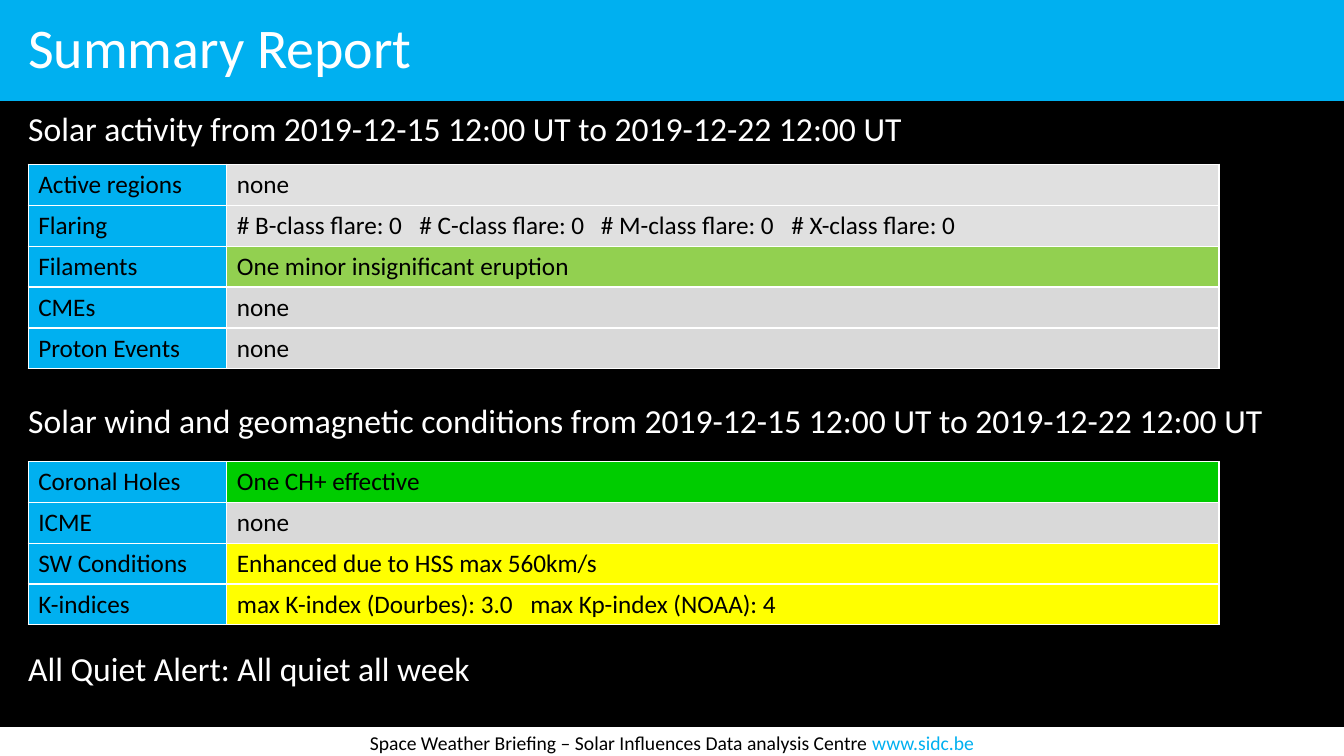
from lxml import etree
from pptx import Presentation
from pptx.dml.color import RGBColor
from pptx.enum.shapes import MSO_SHAPE
from pptx.enum.text import MSO_ANCHOR, PP_ALIGN
from pptx.oxml import parse_xml
from pptx.oxml.ns import nsdecls, qn
from pptx.util import Inches, Pt

BLACK, WHITE, BLUE = "000000", "FFFFFF", "00B0F0"
PALE, GREY = "E0E0E0", "D9D9D9"
LIME, GREEN, YELLOW = "92D050", "00CC00", "FFFF00"

WIDTH, HEIGHT = 13.33, 7.5
MARGIN = 0.28
LABEL_WIDTH, VALUE_WIDTH = 1.97, 9.84

TITLE = "Summary Report"
FOOTER = [("Space Weather Briefing – Solar Influences Data analysis Centre ", BLACK),
          ("www.sidc.be", BLUE)]

# text, top, height, line spacing
HEADINGS = [
    ("Solar activity from 2019-12-15 12:00 UT to 2019-12-22 12:00 UT", 1.04, 0.57, 0.9),
    ("Solar wind and geomagnetic conditions from 2019-12-15 12:00 UT to 2019-12-22 12:00 UT",
     3.96, 0.61, 0.8),
    ("All Quiet Alert: All quiet all week", 6.39, 0.72, 0.9),
]

# top, height, rows of (label, values, fill, tab stops)
REPORTS = [
    (1.63, 2.03, [
        ("Active regions", ["none"], PALE, []),
        ("Flaring", ["# B-class flare: 0", "# C-class flare: 0",
                     "# M-class flare: 0", "# X-class flare: 0"], PALE, [1.81, 3.61, 5.5]),
        ("Filaments", ["One minor insignificant eruption"], LIME, []),
        ("CMEs", ["none"], GREY, []),
        ("Proton Events", ["none"], GREY, []),
    ]),
    (4.58, 1.62, [
        ("Coronal Holes", ["One CH+ effective"], GREEN, []),
        ("ICME", ["none"], GREY, []),
        ("SW Conditions", ["Enhanced due to HSS max 560km/s"], YELLOW, []),
        ("K-indices", ["max K-index (Dourbes): 3.0", "max Kp-index (NOAA): 4"], YELLOW, [2.91]),
    ]),
]


def rgb(color):
    return RGBColor.from_string(color)


def set_font(font, size, color):
    font.name = "Calibri"
    font.size = Pt(size)
    font.color.rgb = rgb(color)


def set_insets(frame, left, top, right, bottom):
    frame.word_wrap = True
    frame.margin_left, frame.margin_top = Inches(left), Inches(top)
    frame.margin_right, frame.margin_bottom = Inches(right), Inches(bottom)


def add_bar(slide, top, height, color):
    bar = slide.shapes.add_shape(MSO_SHAPE.RECTANGLE, 0, Inches(top),
                                 Inches(WIDTH), Inches(height))
    bar.shadow.inherit = False
    bar.fill.solid()
    bar.fill.fore_color.rgb = rgb(color)
    bar.line.color.rgb = rgb(color)
    bar.line.width = Pt(1)
    return bar.text_frame


def add_title(slide):
    frame = add_bar(slide, 0, 1, BLUE)
    set_insets(frame, MARGIN, 0.05, 0.2, 0.05)
    frame.vertical_anchor = MSO_ANCHOR.MIDDLE
    title = frame.paragraphs[0]
    title.text = TITLE
    title.alignment = PP_ALIGN.LEFT
    title.line_spacing = 0.9
    set_font(title.font, 40, WHITE)


def add_footer(slide):
    frame = add_bar(slide, 7.22, 0.28, WHITE)
    set_insets(frame, 0.1, 0.02, 0.1, 0.02)
    frame.vertical_anchor = MSO_ANCHOR.BOTTOM
    footer = frame.paragraphs[0]
    footer.alignment = PP_ALIGN.CENTER
    for text, color in FOOTER:
        run = footer.add_run()
        run.text = text
        set_font(run.font, 14, color)


def add_heading(slide, text, top, height, spacing):
    frame = slide.shapes.add_textbox(0, Inches(top), Inches(WIDTH), Inches(height)).text_frame
    set_insets(frame, MARGIN, 0.08, MARGIN, 0.2)
    heading = frame.paragraphs[0]
    heading.text = text
    heading.line_spacing = spacing
    set_font(heading.font, 24, WHITE)


def add_tab_stops(paragraph, stops):
    tab_list = etree.SubElement(paragraph._p.get_or_add_pPr(), qn("a:tabLst"))
    for stop in stops:
        etree.SubElement(tab_list, qn("a:tab"), pos=str(Inches(stop)), algn="l")


def fill_cell(cell, values, color, stops):
    properties = cell._tc.get_or_add_tcPr()
    for side in ("lnL", "lnR", "lnT", "lnB"):
        properties.append(parse_xml(
            f'<a:{side} {nsdecls("a")} w="{Pt(1)}"><a:solidFill>'
            f'<a:srgbClr val="{WHITE}"/></a:solidFill></a:{side}>'))
    cell.fill.solid()
    cell.fill.fore_color.rgb = rgb(color)
    paragraph = cell.text_frame.paragraphs[0]
    paragraph.text = "\t".join(values)
    if stops:
        add_tab_stops(paragraph, stops)
    set_font(paragraph.font, 18, BLACK)


def add_report(slide, top, height, rows):
    table = slide.shapes.add_table(len(rows), 2, Inches(MARGIN), Inches(top),
                                   Inches(LABEL_WIDTH + VALUE_WIDTH), Inches(height)).table
    table.first_row = table.horz_banding = False
    table.columns[0].width = Inches(LABEL_WIDTH)
    table.columns[1].width = Inches(VALUE_WIDTH)
    for index, (label, values, color, stops) in enumerate(rows):
        fill_cell(table.cell(index, 0), [label], BLUE, [])
        fill_cell(table.cell(index, 1), values, color, stops)


def main():
    deck = Presentation()
    deck.slide_width, deck.slide_height = Inches(WIDTH), Inches(HEIGHT)
    slide = deck.slides.add_slide(deck.slide_layouts[6])
    slide.background.fill.solid()
    slide.background.fill.fore_color.rgb = rgb(BLACK)
    add_footer(slide)
    add_title(slide)
    for heading in HEADINGS:
        add_heading(slide, *heading)
    for report in REPORTS:
        add_report(slide, *report)
    deck.save("out.pptx")


if __name__ == "__main__":
    main()
